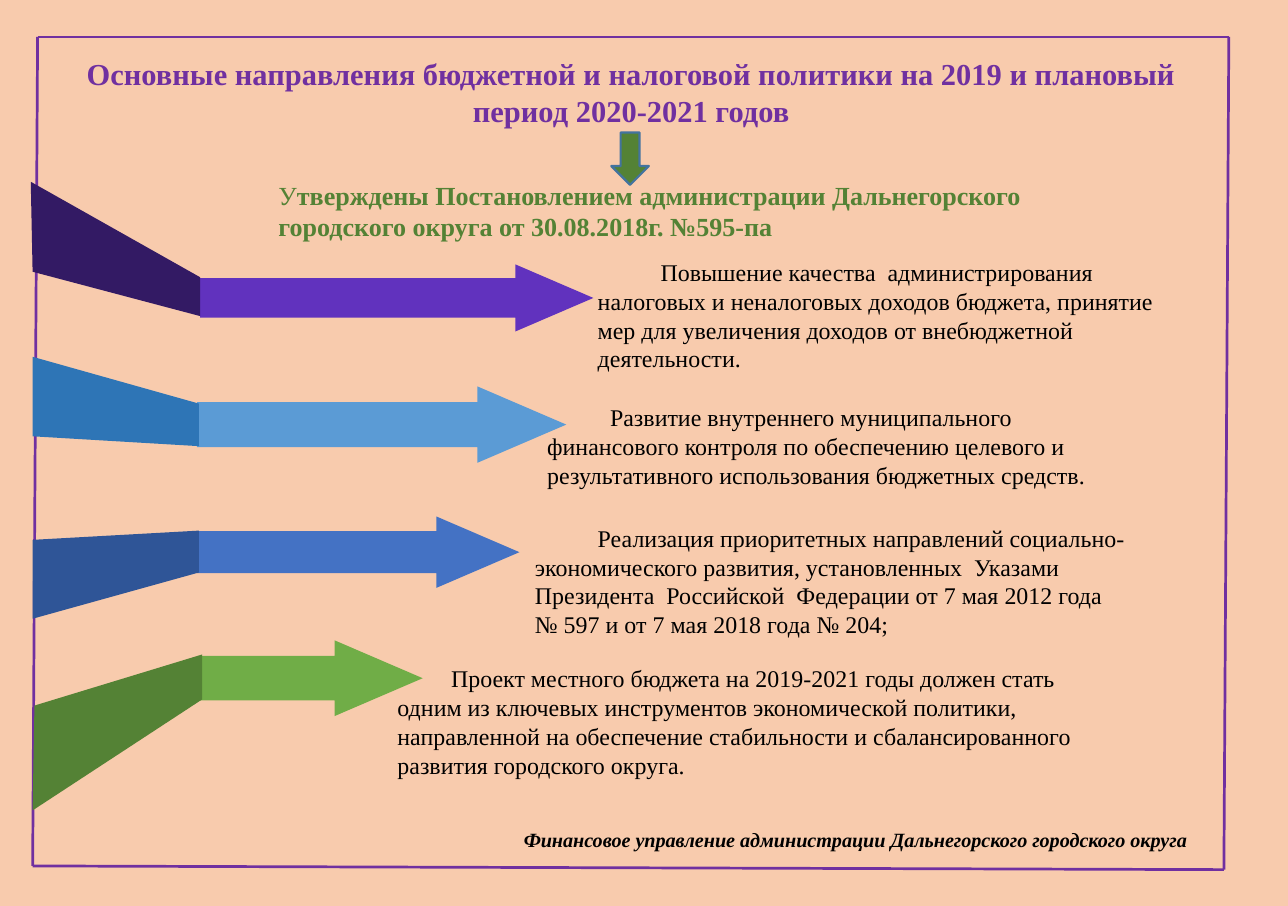
from dataclasses import dataclass
from itertools import pairwise

from lxml import etree
from pptx import Presentation
from pptx import util as u
from pptx.dml.color import RGBColor
from pptx.enum import shapes, text
from pptx.oxml import ns
from pptx.shapes.autoshape import Shape
from pptx.slide import Slide

Point = tuple[float, float]


@dataclass(frozen=True)
class Theme:
    font: str = "Times New Roman"
    background: str = "F8CBAD"
    frame: str = "7030A0"
    title: str = "7030A0"
    approval: str = "548235"
    pointer_line: str = "43739E"
    body: str = "000000"
    title_size: float = 14
    approval_size: float = 12
    body_size: float = 11
    footer_size: float = 9.3


@dataclass(frozen=True)
class Span:
    words: str
    bold: bool = False
    italic: bool = False


@dataclass(frozen=True)
class Caption:
    left: float
    top: float
    width: float
    height: float
    spans: tuple[Span, ...]
    size: float
    color: str
    indent: float = 0
    centered: bool = False


@dataclass(frozen=True)
class Direction:
    left: float
    top: float
    width: float
    height: float
    arrow_color: str
    tail: tuple[Point, ...]
    tail_color: str
    caption: Caption


THEME = Theme()
SLIDE_SIZE = (20.9, 14.7)
FRAME_CORNERS = ((0.61, 0.6), (19.94, 0.6), (19.86, 14.11), (0.53, 14.05))
SHAFT_SHARE = 0.588
HEAD_RATIO = 1.163


def body_caption(left: float, top: float, width: float, height: float,
                 words: str, indent: float = 1.02) -> Caption:
    return Caption(left, top, width, height, (Span(words),),
                   THEME.body_size, THEME.body, indent)


FOOTER = Caption(
    7.67, 13.3, 12.62, 0.66,
    (Span("Финансовое управление администрации Дальнегорского городского округа",
          bold=True, italic=True),),
    THEME.footer_size, THEME.body, indent=0.58)
TITLE = Caption(
    0.58, 0.77, 19.33, 1.45,
    (Span("Основные направления бюджетной и налоговой политики на 2019 и плановый "
          "период 2020-2021 годов", bold=True),),
    THEME.title_size, THEME.title, centered=True)
APPROVAL = Caption(
    4.27, 2.78, 13.59, 1.27,
    (Span("У"),
     Span("тверждены Постановлением администрации Дальнегорского городского округа "
          "от 30.08.2018г. №595-па", bold=True)),
    THEME.approval_size, THEME.approval)

DIRECTIONS = (
    Direction(
        3.25, 4.29, 6.38, 1.09, "6132BE",
        ((0.5, 2.95), (3.25, 4.5), (3.25, 5.13), (0.53, 4.41)), "331A64",
        body_caption(9.45, 4.06, 10.19, 2.13,
                     "Повышение качества  администрирования налоговых и неналоговых "
                     "доходов бюджета, принятие мер для увеличения доходов от "
                     "внебюджетной деятельности.")),
    Direction(
        3.2, 6.27, 5.99, 1.24, "5B9BD5",
        ((0.53, 5.79), (3.23, 6.55), (3.23, 7.24), (0.53, 7.08)), "2E75B6",
        body_caption(8.63, 6.41, 10.19, 1.68,
                     "Развитие внутреннего муниципального финансового контроля по "
                     "обеспечению целевого и результативного использования "
                     "бюджетных средств.")),
    Direction(
        3.2, 8.38, 5.23, 1.16, "4472C4",
        ((0.53, 8.76), (3.23, 8.61), (3.23, 9.29), (0.53, 10.04)), "2F5597",
        body_caption(8.43, 8.37, 10.13, 2.13,
                     "Реализация приоритетных направлений социально-экономического "
                     "развития, установленных  Указами  Президента  Российской  "
                     "Федерации от 7 мая 2012 года № 597 и от 7 мая 2018 года № 204;")),
    Direction(
        3.25, 10.39, 3.61, 1.23, "70AD47",
        ((0.56, 11.45), (3.28, 10.62), (3.28, 11.35), (0.53, 13.15)), "548235",
        body_caption(6.2, 10.65, 11.94, 2.13,
                     "Проект местного бюджета на 2019-2021 годы должен стать одним из "
                     "ключевых инструментов экономической политики, направленной на "
                     "обеспечение стабильности и сбалансированного развития "
                     "городского округа.", indent=0.87)),
)


def rgb(color: str) -> RGBColor:
    return RGBColor.from_string(color)


def paint(shape: Shape, color: str) -> None:
    shape.shadow.inherit = False
    shape.fill.solid()
    shape.fill.fore_color.rgb = rgb(color)
    shape.line.fill.background()


def draw_caption(page: Slide, caption: Caption) -> None:
    box = page.shapes.add_textbox(u.Cm(caption.left), u.Cm(caption.top),
                                  u.Cm(caption.width), u.Cm(caption.height))
    box.text_frame.word_wrap = True
    box.text_frame.auto_size = text.MSO_AUTO_SIZE.SHAPE_TO_FIT_TEXT
    para = box.text_frame.paragraphs[0]
    para.alignment = text.PP_ALIGN.CENTER if caption.centered else text.PP_ALIGN.LEFT
    para._p.get_or_add_pPr().set("indent", str(u.Cm(caption.indent)))
    for span in caption.spans:
        run = para.add_run()
        run.text = span.words
        run.font.name = THEME.font
        run.font.size = u.Pt(caption.size)
        run.font.color.rgb = rgb(caption.color)
        run.font.bold = span.bold
        run.font.italic = span.italic


def draw_frame(page: Slide) -> None:
    for start, end in pairwise(FRAME_CORNERS + FRAME_CORNERS[:1]):
        side = page.shapes.add_connector(shapes.MSO_CONNECTOR.STRAIGHT,
                                         *map(u.Cm, start + end))
        side.line.color.rgb = rgb(THEME.frame)
        side.line.width = u.Pt(1.25)
        etree.SubElement(side._element.spPr, ns.qn("a:effectLst"))


def draw_arrow(page: Slide, direction: Direction) -> None:
    arrow = page.shapes.add_shape(
        shapes.MSO_SHAPE.RIGHT_ARROW, u.Cm(direction.left), u.Cm(direction.top),
        u.Cm(direction.width), u.Cm(direction.height))
    arrow.adjustments[0] = SHAFT_SHARE
    arrow.adjustments[1] = HEAD_RATIO
    paint(arrow, direction.arrow_color)


def draw_tail(page: Slide, direction: Direction) -> None:
    first, *others = [(u.Cm(x), u.Cm(y)) for x, y in direction.tail]
    builder = page.shapes.build_freeform(*first)
    builder.add_line_segments(others, close=True)
    paint(builder.convert_to_shape(), direction.tail_color)


def draw_pointer(page: Slide) -> None:
    pointer = page.shapes.add_shape(shapes.MSO_SHAPE.DOWN_ARROW, u.Cm(9.92),
                                    u.Cm(2.15), u.Cm(0.61), u.Cm(0.85))
    paint(pointer, THEME.approval)
    pointer.line.color.rgb = rgb(THEME.pointer_line)
    pointer.line.width = u.Pt(1)


def main() -> None:
    deck = Presentation()
    deck.slide_width, deck.slide_height = map(u.Cm, SLIDE_SIZE)
    page = deck.slides.add_slide(deck.slide_layouts[6])
    page.background.fill.solid()
    page.background.fill.fore_color.rgb = rgb(THEME.background)
    draw_caption(page, FOOTER)
    draw_frame(page)
    draw_caption(page, TITLE)
    for direction in DIRECTIONS:
        draw_arrow(page, direction)
        draw_tail(page, direction)
        draw_caption(page, direction.caption)
    draw_caption(page, APPROVAL)
    draw_pointer(page)
    deck.save("out.pptx")


if __name__ == "__main__":
    main()
